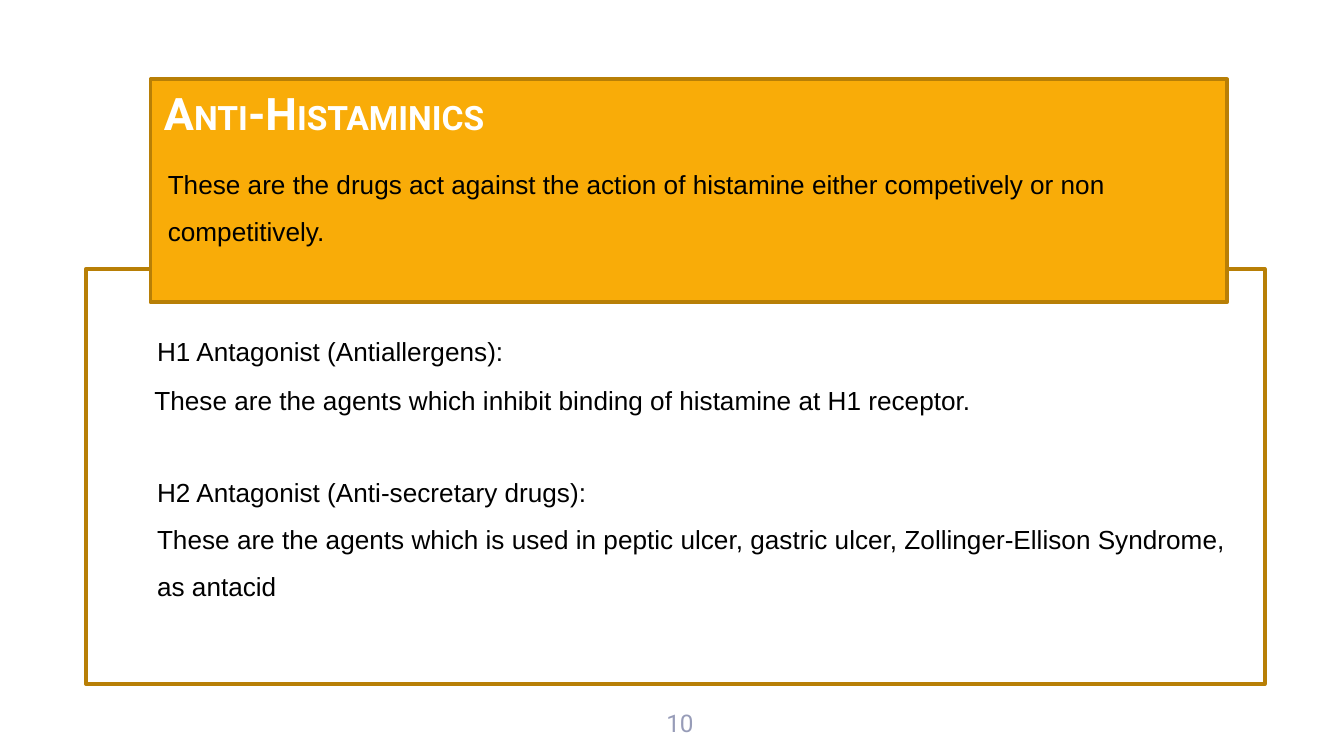
from dataclasses import dataclass

from pptx import Presentation
from pptx.dml.color import RGBColor
from pptx.enum.shapes import MSO_SHAPE as Shape
from pptx.enum.text import MSO_ANCHOR as Anchor, MSO_AUTO_SIZE as AutoSize, PP_ALIGN as Align
from pptx.util import Inches, Pt


@dataclass(frozen=True)
class Theme:
    amber: str = "F9AC08"
    border: str = "B87F06"
    white: str = "FFFFFF"
    black: str = "000000"
    muted: str = "979CB8"
    heading_font: str = "Roboto"
    body_font: str = "Arial"
    capital_size: int = 24
    small_capital_size: int = 18
    body_size: int = 14
    number_size: int = 13
    border_width: int = 2


class SlideBuilder:
    def __init__(self, slide, theme):
        self.slide = slide
        self.theme = theme

    def style(self, span, name, size, color, bold=False):
        values = {"name": name, "size": Pt(size), "bold": bold}
        for key, value in values.items():
            setattr(span.font, key, value)
        span.font.color.rgb = RGBColor.from_string(color)

    def format_frame(self, frame, inset=0.05):
        values = {
            "word_wrap": True,
            "auto_size": AutoSize.NONE,
            "vertical_anchor": Anchor.TOP,
            "margin_left": Inches(0.1),
            "margin_right": Inches(0.1),
            "margin_top": Inches(inset),
            "margin_bottom": Inches(inset),
        }
        for key, value in values.items():
            setattr(frame, key, value)

    def panel(self, place, fill=None):
        box = self.slide.shapes.add_shape(Shape.RECTANGLE, *map(Inches, place))
        box.shadow.inherit = False
        if fill:
            box.fill.solid()
            box.fill.fore_color.rgb = RGBColor.from_string(fill)
        else:
            box.fill.background()
        box.line.color.rgb = RGBColor.from_string(self.theme.border)
        box.line.width = Pt(self.theme.border_width)

    def title(self, place, parts):
        """Write (capitals, small capitals) pairs in the title, in front of the panels."""
        title = self.slide.shapes.title
        title.element.getparent().append(title.element)
        for key, value in zip(("left", "top", "width", "height"), place):
            setattr(title, key, Inches(value))
        self.format_frame(title.text_frame)
        para = title.text_frame.paragraphs[0]
        para.alignment = Align.LEFT
        sizes = (self.theme.capital_size, self.theme.small_capital_size)
        for pair in parts:
            for text, size in zip(pair, sizes):
                span = para.add_run()
                span.text = text
                self.style(span, self.theme.heading_font, size, self.theme.white, bold=True)

    def text(self, place, lines, spacing=1.0, align=Align.LEFT):
        frame = self.slide.shapes.add_textbox(*map(Inches, place)).text_frame
        self.format_frame(frame)
        frame.text = "\n".join(lines)
        for para in frame.paragraphs:
            para.alignment = align
            para.line_spacing = spacing
            self.style(para.runs[0], self.theme.body_font, self.theme.body_size, self.theme.black)

    def page_number(self, place, number):
        frame = self.slide.shapes.add_textbox(*map(Inches, place)).text_frame
        self.format_frame(frame, inset=0.1)
        para = frame.paragraphs[0]
        para.alignment = Align.CENTER
        span = para.add_run()
        span.text = str(number)
        self.style(span, self.theme.heading_font, self.theme.number_size, self.theme.muted)


def main():
    deck = Presentation()
    deck.slide_width = Inches(10)
    deck.slide_height = deck.slide_width * 9 // 16
    title_only = deck.slide_layouts[5]
    theme = Theme()
    page = SlideBuilder(deck.slides.add_slide(title_only), theme)

    page.page_number((4.76, 5.17, 0.6, 0.33), 10)
    page.panel((0.64, 2, 8.77, 3.09))
    page.panel((1.12, 0.59, 8.01, 1.66), theme.amber)
    page.title((1.12, 0.59, 6.55, 0.74), [("A", "NTI"), ("-H", "ISTAMINICS")])
    page.text(
        (1.15, 1.09, 8.09, 0.76),
        [
            "These are the drugs act against the action of histamine either competively or non",
            "competitively.",
        ],
        spacing=1.5,
        align=Align.JUSTIFY,
    )
    page.text((1.07, 2.45, 8.01, 0.34), ["H1 Antagonist (Antiallergens):"])
    page.text(
        (1.05, 2.81, 7.91, 0.34),
        ["These are the agents which inhibit binding of histamine at H1 receptor."],
    )
    page.text(
        (1.07, 3.38, 8.29, 1.4),
        [
            "H2 Antagonist (Anti-secretary drugs):",
            "These are the agents which is used in peptic ulcer, gastric ulcer, "
            "Zollinger-Ellison Syndrome, as antacid",
        ],
        spacing=1.5,
    )
    deck.save("out.pptx")


if __name__ == "__main__":
    main()
